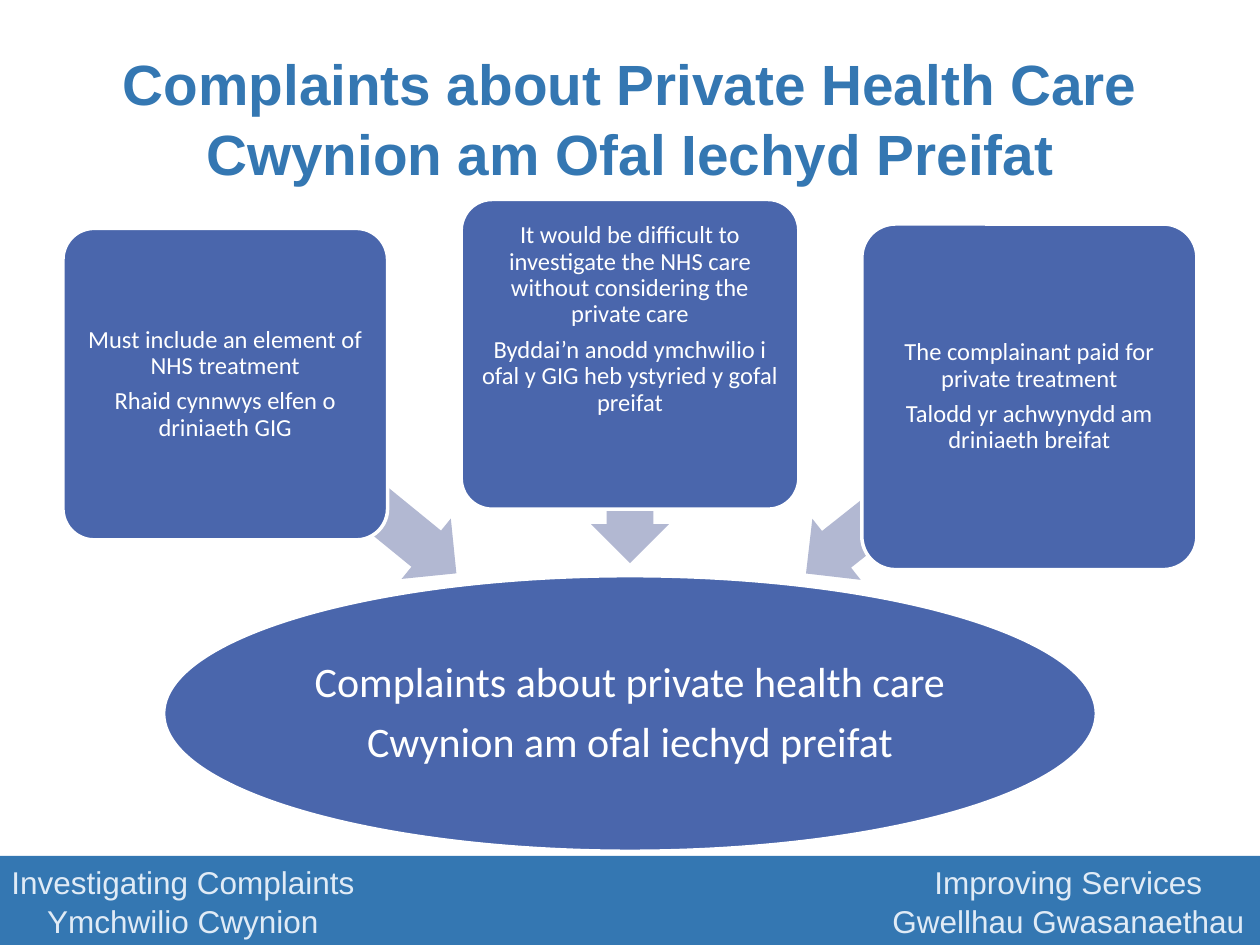
import pptx
import pptx.dml.color
import pptx.enum.shapes
import pptx.enum.text
import pptx.util

Pt = pptx.util.Pt
SHAPES = pptx.enum.shapes.MSO_SHAPE
COLOURS = {
    "band": "3477B2",
    "band_text": "E0EBF6",
    "card": "4A66AC",
    "arrow": "B2B8D2",
    "white": "FFFFFF",
}
CARDS = [
    {
        "box": (36, 130.5, 185.5, 178),
        "arrow": (109.5, 251.5, 170.5, 44.5),
        "rotation": 219.2,
        "bottom": 2,
        "lines": ["Must include an element of NHS treatment",
                  "Rhaid cynnwys elfen o driniaeth GIG"],
    },
    {
        "box": (263.5, 114, 193, 177),
        "arrow": (300.25, 239.75, 119.5, 44.5),
        "rotation": 270,
        "bottom": 42,
        "lines": ["It would be difficult to investigate the NHS care "
                  "without considering the private care",
                  "Byddai’n anodd ymchwilio i ofal y GIG heb ystyried "
                  "y gofal preifat"],
    },
    {
        "box": (492.5, 128, 191.5, 197.5),
        "arrow": (443, 255, 162.5, 44.5),
        "rotation": 321.6,
        "bottom": 2,
        "lines": ["The complainant paid for private treatment",
                  "Talodd yr achwynydd am driniaeth breifat"],
    },
]


def colour(name):
    return pptx.dml.color.RGBColor.from_string(COLOURS[name])


def add_filled_shape(slide, kind, box, fill, line=None):
    shape = slide.shapes.add_shape(kind, *map(Pt, box))
    shape.shadow.inherit = False
    shape.fill.solid()
    shape.fill.fore_color.rgb = colour(fill)
    if line:
        shape.line.color.rgb = colour(line)
        shape.line.width = Pt(2)
    else:
        shape.line.fill.background()
    return shape


def write_lines(shape, lines, font, size, text_colour, spacing,
                after=0, bold=False, inset=2, bottom=2):
    frame = shape.text_frame
    frame.text = "\n".join(lines)
    frame.word_wrap = True
    frame.auto_size = pptx.enum.text.MSO_AUTO_SIZE.NONE
    frame.vertical_anchor = pptx.enum.text.MSO_ANCHOR.MIDDLE
    frame.margin_left = frame.margin_right = frame.margin_top = Pt(inset)
    frame.margin_bottom = Pt(bottom)
    for paragraph in frame.paragraphs:
        paragraph.alignment = pptx.enum.text.PP_ALIGN.CENTER
        paragraph.line_spacing = spacing
        paragraph.space_before = Pt(0)
        paragraph.space_after = Pt(after)
        for run in paragraph.runs:
            run.font.name = font
            run.font.size = Pt(size)
            run.font.bold = bold
            run.font.color.rgb = colour(text_colour)


def place_title(slide, box):
    title = slide.shapes.title
    title.left, title.top, title.width, title.height = map(Pt, box)
    lines = ["Complaints about Private Health Care\vCwynion am Ofal Iechyd Preifat"]
    write_lines(title, lines, "Arial", 32.4, "band", 1.04, bold=True)


def place_footer(slide, box):
    left, top, width, height = box
    add_filled_shape(slide, SHAPES.RECTANGLE, box, "band")
    text_width = 209
    slogans = [
        (left, ["Investigating Complaints", "Ymchwilio Cwynion"]),
        (left + width - text_width - 5,
         ["Improving Services", "Gwellhau Gwasanaethau"]),
    ]
    for text_left, lines in slogans:
        text_box = slide.shapes.add_textbox(
            Pt(text_left), Pt(top), Pt(text_width), Pt(height))
        write_lines(text_box, lines, "Arial", 18, "band_text", 1.05)


def place_conclusion(slide, box):
    ellipse = add_filled_shape(slide, SHAPES.OVAL, box, "card", "white")
    lines = ["Complaints about private health care",
             "Cwynion am ofal iechyd preifat"]
    write_lines(ellipse, lines, "Calibri", 24, "white", 0.9, after=8.4)


def place_card(slide, card):
    arrow = add_filled_shape(slide, SHAPES.LEFT_ARROW, card["arrow"], "arrow")
    arrow.adjustments[0] = 0.6
    arrow.adjustments[1] = 0.5
    arrow.rotation = card["rotation"]
    shape = add_filled_shape(
        slide, SHAPES.ROUNDED_RECTANGLE, card["box"], "card", "white")
    shape.adjustments[0] = 0.1
    write_lines(shape, card["lines"], "Calibri", 14, "white", 0.9,
                after=4.9, bottom=card["bottom"])


def main():
    presentation = pptx.Presentation()
    presentation.slide_width = Pt(720)
    presentation.slide_height = Pt(540)
    slide = presentation.slides.add_slide(presentation.slide_layouts[5])
    place_footer(slide, (0, 489, 720, 51))
    place_title(slide, (36, 21.6, 648, 90))
    place_conclusion(slide, (93.5, 329, 533, 157.5))
    for card in CARDS:
        place_card(slide, card)
    presentation.save("out.pptx")


if __name__ == "__main__":
    main()
